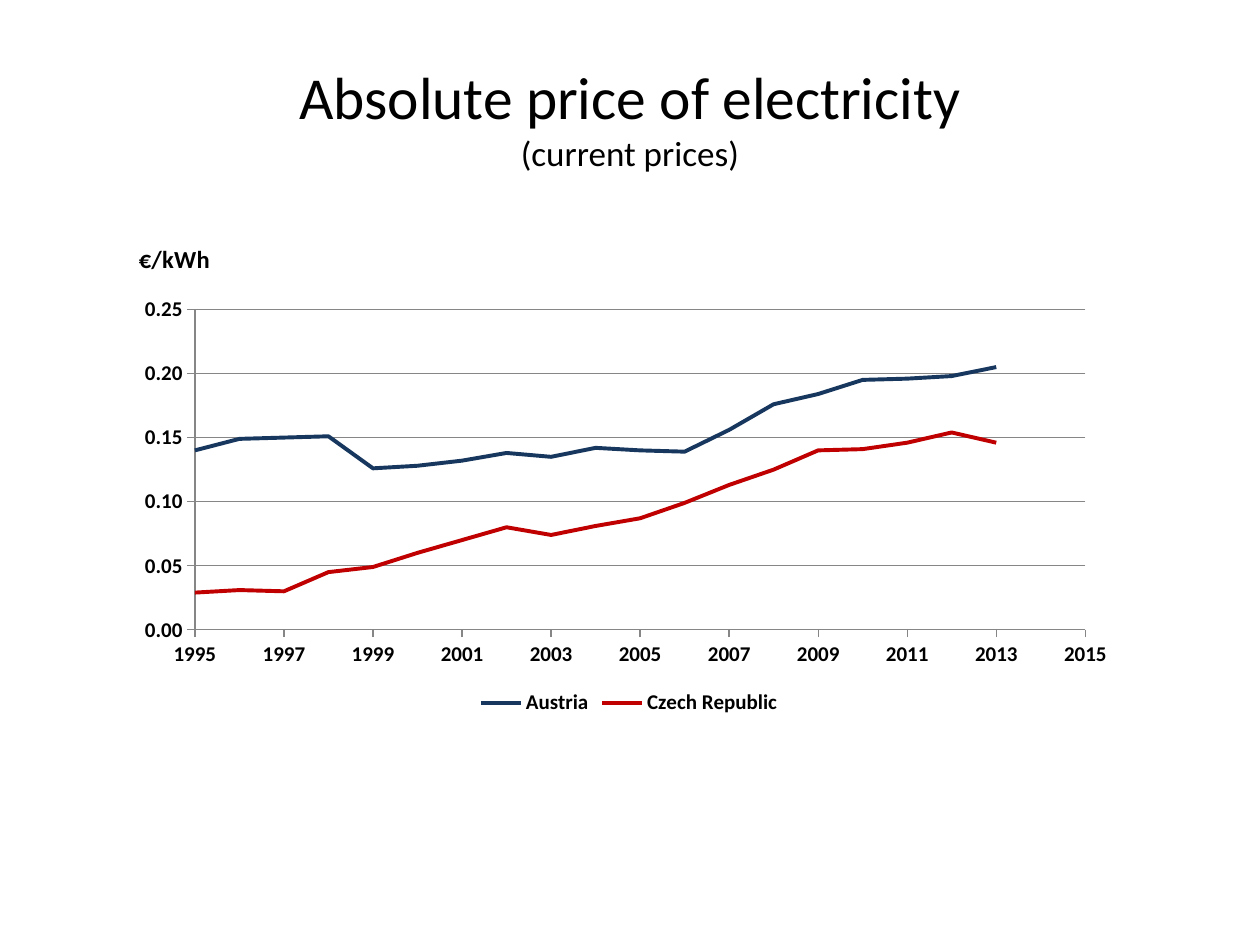
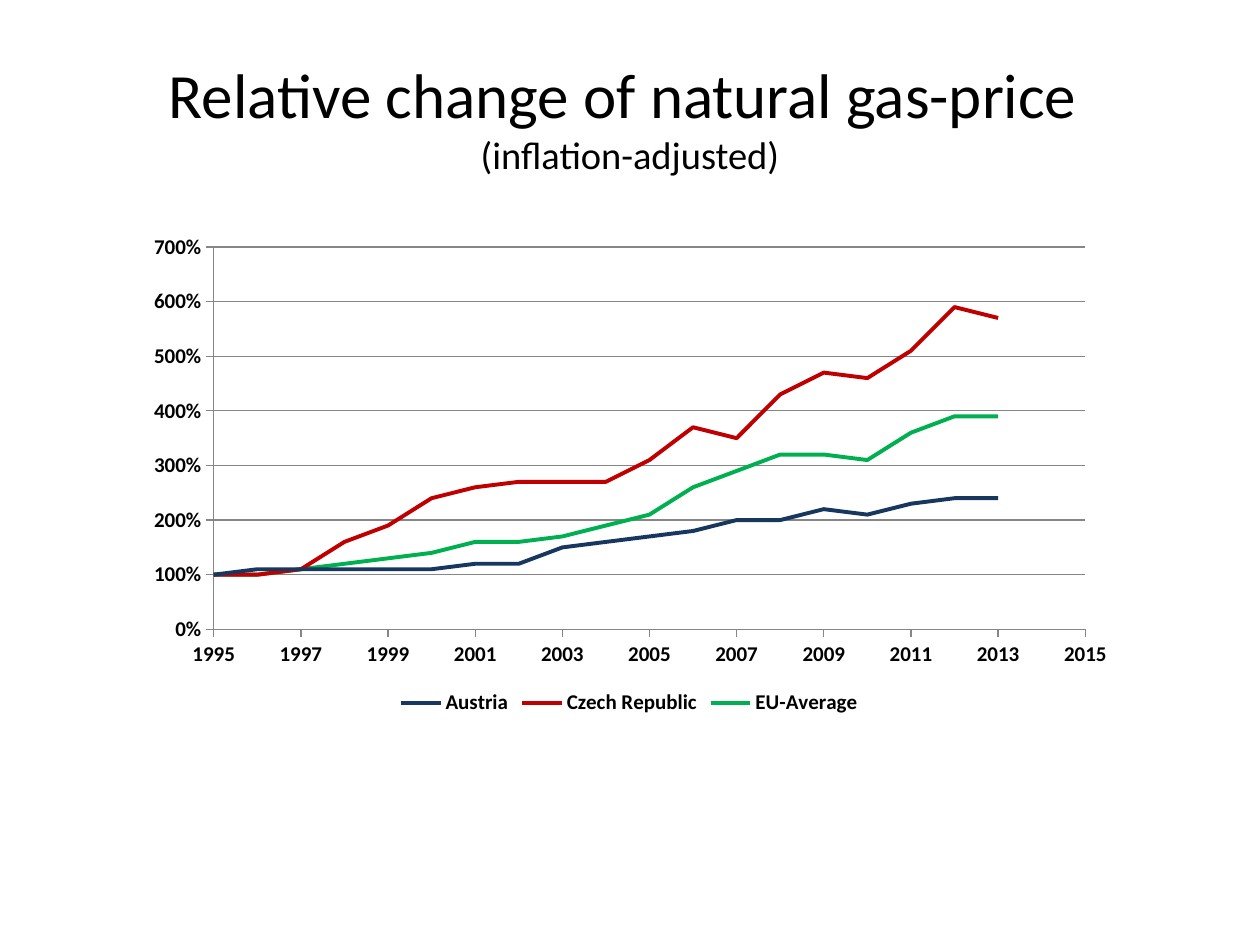
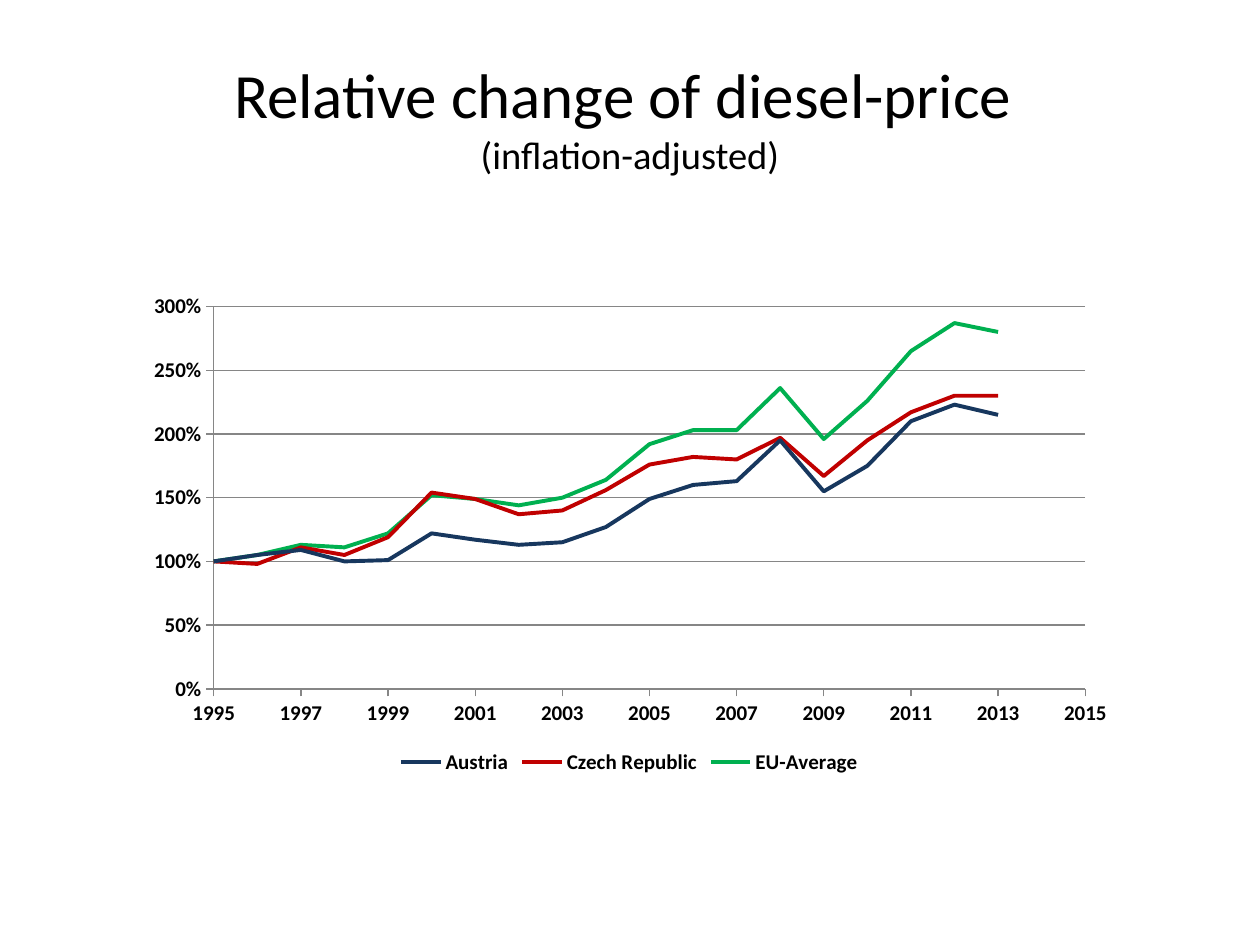
from lxml.etree import SubElement
from pptx import Presentation
from pptx.chart.data import XyChartData
from pptx.dml.color import RGBColor
from pptx.enum.chart import XL_CHART_TYPE, XL_LEGEND_POSITION, XL_TICK_MARK
from pptx.enum.text import MSO_ANCHOR, MSO_AUTO_SIZE, PP_ALIGN
from pptx.oxml.ns import qn
from pptx.util import Cm, Pt

BLACK = RGBColor(0x00, 0x00, 0x00)
GREY = RGBColor(0x86, 0x86, 0x86)
NAVY = RGBColor(0x17, 0x37, 0x5E)
RED = RGBColor(0xC0, 0x00, 0x00)
GREEN = RGBColor(0x00, 0xB0, 0x50)
FONT = "Calibri"
COLOURS = {"Austria": NAVY, "Czech Republic": RED, "EU-Average": GREEN}
FIRST_YEAR = 1995
PLOT_WITH_UNIT = {"x": 6.2, "y": 17.2, "w": 89.8, "h": 64.6}
PLOT_PERCENT = {"x": 8.1, "y": 4.6, "w": 87.9, "h": 77.1}

SLIDES = [
    {
        "title": "Absolute price of electricity", "subtitle": "(current prices)",
        "sizes": (34, 20), "top": 4.52, "plot": PLOT_WITH_UNIT,
        "unit": "€/kWh", "maximum": 0.25, "step": 0.05, "format": "0.00",
        "series": {
            "Austria": [0.14, 0.149, 0.15, 0.151, 0.126, 0.128, 0.132, 0.138, 0.135, 0.142,
                        0.14, 0.139, 0.156, 0.176, 0.184, 0.195, 0.196, 0.198, 0.205],
            "Czech Republic": [0.029, 0.031, 0.03, 0.045, 0.049, 0.06, 0.07, 0.08, 0.074, 0.081,
                               0.087, 0.099, 0.113, 0.125, 0.14, 0.141, 0.146, 0.154, 0.146],
        },
    },
    {
        "title": "Relative change of natural gas-price ", "subtitle": "(inflation-adjusted)",
        "sizes": (36, 22), "top": 4.52, "plot": PLOT_PERCENT,
        "unit": None, "maximum": 7, "step": 1, "format": "0%",
        "series": {
            "Austria": [1, 1.1, 1.1, 1.1, 1.1, 1.1, 1.2, 1.2, 1.5, 1.6,
                        1.7, 1.8, 2, 2, 2.2, 2.1, 2.3, 2.4, 2.4],
            "Czech Republic": [1, 1, 1.1, 1.6, 1.9, 2.4, 2.6, 2.7, 2.7, 2.7,
                               3.1, 3.7, 3.5, 4.3, 4.7, 4.6, 5.1, 5.9, 5.7],
            "EU-Average": [1, 1, 1.1, 1.2, 1.3, 1.4, 1.6, 1.6, 1.7, 1.9,
                           2.1, 2.6, 2.9, 3.2, 3.2, 3.1, 3.6, 3.9, 3.9],
        },
    },
    {
        "title": "Relative change of diesel-price ", "subtitle": "(inflation-adjusted)",
        "sizes": (36, 22), "top": 5.72, "plot": PLOT_PERCENT,
        "unit": None, "maximum": 3, "step": 0.5, "format": "0%",
        "series": {
            "Austria": [1, 1.05, 1.09, 1, 1.01, 1.22, 1.17, 1.13, 1.15, 1.27,
                        1.49, 1.6, 1.63, 1.95, 1.55, 1.75, 2.1, 2.23, 2.15],
            "Czech Republic": [1, 0.98, 1.11, 1.05, 1.19, 1.54, 1.49, 1.37, 1.4, 1.56,
                               1.76, 1.82, 1.8, 1.97, 1.67, 1.95, 2.17, 2.3, 2.3],
            "EU-Average": [1, 1.05, 1.13, 1.11, 1.22, 1.52, 1.49, 1.44, 1.5, 1.64,
                           1.92, 2.03, 2.03, 2.36, 1.96, 2.26, 2.65, 2.87, 2.8],
        },
    },
]


def set_values(target, values):
    for name, value in values.items():
        setattr(target, name, value)


def set_layout(element, index, modes, percentages):
    for layout in element.findall(qn("c:layout")):
        element.remove(layout)
    layout = SubElement(element, qn("c:layout"))
    element.insert(index, layout)
    manual = SubElement(layout, qn("c:manualLayout"))
    for name, mode in modes.items():
        SubElement(manual, qn(f"c:{name}")).set("val", mode)
    for name, percentage in percentages.items():
        SubElement(manual, qn(f"c:{name}")).set("val", f"{percentage / 100:.3f}")


presentation = Presentation()
presentation.slide_width = Cm(25.4)
presentation.slide_height = Cm(19.05)

for content in SLIDES:
    slide = presentation.slides.add_slide(presentation.slide_layouts[5])

    title = slide.shapes.title
    set_values(title, {"left": Cm(1.27), "top": Cm(0.76), "width": Cm(22.86), "height": Cm(3.18)})
    set_values(title.text_frame, {
        "auto_size": MSO_AUTO_SIZE.NONE, "vertical_anchor": MSO_ANCHOR.MIDDLE, "word_wrap": True,
    })
    paragraph = title.text_frame.paragraphs[0]
    paragraph.alignment = PP_ALIGN.CENTER
    for position, key in enumerate(("title", "subtitle")):
        if position:
            paragraph.add_line_break()
        run = paragraph.add_run()
        run.text = content[key]
        set_values(run.font, {"name": FONT, "size": Pt(content["sizes"][position])})
        run.font.color.rgb = BLACK

    chart_data = XyChartData()
    for name, values in content["series"].items():
        series_data = chart_data.add_series(name)
        for year, value in enumerate(values, FIRST_YEAR):
            series_data.add_data_point(year, value)
    chart = slide.shapes.add_chart(
        XL_CHART_TYPE.XY_SCATTER_LINES_NO_MARKERS,
        Cm(2.69), Cm(content["top"]), Cm(19.99), Cm(10), chart_data,
    ).chart
    set_values(chart, {"has_title": False, "has_legend": True})
    set_values(chart.font, {"name": FONT, "size": Pt(10)})
    chart.font.color.rgb = BLACK
    set_values(chart.legend, {"position": XL_LEGEND_POSITION.BOTTOM, "include_in_layout": False})
    set_values(chart.legend.font, {"size": Pt(12), "bold": True})

    axis_formats = [
        (chart.category_axis, FIRST_YEAR, 2015, 2, "0", False),
        (chart.value_axis, 0, content["maximum"], content["step"], content["format"], True),
    ]
    for axis, minimum, maximum, step, number_format, gridlines in axis_formats:
        set_values(axis, {
            "minimum_scale": minimum, "maximum_scale": maximum, "major_unit": step,
            "major_tick_mark": XL_TICK_MARK.OUTSIDE, "minor_tick_mark": XL_TICK_MARK.NONE,
            "has_major_gridlines": gridlines, "has_title": False,
        })
        set_values(axis.tick_labels, {"number_format": number_format, "number_format_is_linked": False})
        set_values(axis.tick_labels.font, {"size": Pt(12), "bold": True})
        lines = [axis.format.line]
        if gridlines:
            lines.append(axis.major_gridlines.format.line)
        for line in lines:
            line.color.rgb = GREY
            line.width = Pt(0.75)

    edge_modes = {"xMode": "edge", "yMode": "edge"}
    if content["unit"]:
        axis_title = chart.value_axis.axis_title
        axis_title.text_frame.text = content["unit"]
        unit_font = axis_title.text_frame.paragraphs[0].runs[0].font
        set_values(unit_font, {"name": FONT, "size": Pt(14), "bold": True})
        unit_font.color.rgb = BLACK
        body = axis_title._element.find(".//" + qn("a:bodyPr"))
        body.set("rot", "0")
        body.set("vert", "horz")
        set_layout(axis_title._element, 1, edge_modes, {"x": 0.1, "y": 2.6})

    plot = chart.plots[0]
    plot.vary_by_categories = False
    for series in plot.series:
        series.smooth = False
        series.format.line.color.rgb = COLOURS[series.name]
        series.format.line.width = Pt(2.25)
    plot_modes = {"layoutTarget": "inner", **edge_modes}
    set_layout(chart._chartSpace.chart.plotArea, 0, plot_modes, content["plot"])

presentation.save("out.pptx")
